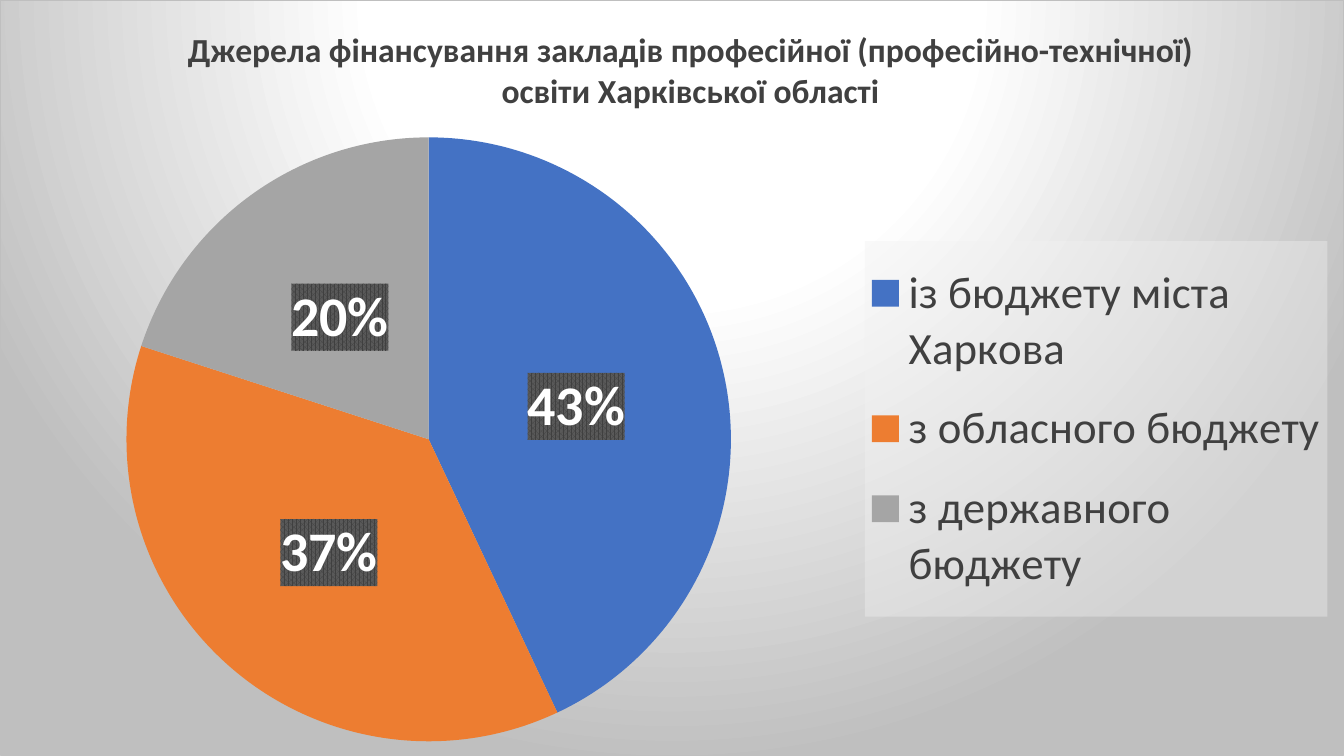
from lxml.etree import fromstring
from pptx import Presentation
from pptx.chart.data import CategoryChartData
from pptx.dml.color import RGBColor
from pptx.enum.chart import XL_CHART_TYPE, XL_LABEL_POSITION, XL_LEGEND_POSITION
from pptx.oxml.ns import qn
from pptx.util import Inches, Pt

# Content
TITLE = ("Джерела фінансування закладів професійної "
         "(професійно-технічної) освіти Харківської області")
PARTS = [
    ("із бюджету міста Харкова", 43, "4472C4"),
    ("з обласного бюджету", 37, "ED7D31"),
    ("з державного бюджету", 20, "A5A5A5"),
]
WIDE, HIGH = 13.33, 7.5
FACE, DARK, WHITE = "Calibri", "404040", "FFFFFF"
# Left, top, width, height in inches
PIE_BOX = (1.25, 1.36, 6, 6)
KEY_BOX = (8.58, 2.39, 4.59, 3.73)
HEAD_BOX = (1.8, 0.2)

NS = ('xmlns:c="http://schemas.openxmlformats.org/drawingml/2006/chart" '
      'xmlns:a="http://schemas.openxmlformats.org/drawingml/2006/main"')


def color(code):
    return RGBColor.from_string(code)


def style(font, size, code, bold=False):
    font.name, font.size, font.bold = FACE, Pt(size), bold
    font.color.rgb = color(code)


def put(frame, text, **form):
    run = frame.paragraphs[0].add_run()
    run.text = text
    style(run.font, **form)


def look(fill, line="<a:ln><a:noFill/></a:ln>"):
    return fromstring(f"<c:spPr {NS}>{fill}{line}</c:spPr>")


def tint(code, extra=""):
    return f'<a:srgbClr val="{code}">{extra}</a:srgbClr>'


def layout(box, inner=False):
    """Turn a box in inches into a chart layout in shares of the slide."""
    keys = ("x", "y", "w", "h")[:len(box)]
    tags = '<c:layoutTarget val="inner"/>' if inner else ""
    tags += "".join(f'<c:{key}Mode val="edge"/>' for key in keys[:2])
    for key, size, full in zip(keys, box, (WIDE, HIGH) * 2):
        tags += f'<c:{key} val="{size / full:.4f}"/>'
    return fromstring(
        f"<c:layout {NS}><c:manualLayout>{tags}</c:manualLayout></c:layout>")


def place(part, spot, box, inner=False):
    for old in part.findall(qn("c:layout")):
        part.remove(old)
    part.insert(spot, layout(box, inner))


# Slide and chart
deck = Presentation()
deck.slide_width, deck.slide_height = Inches(WIDE), Inches(HIGH)
slide = deck.slides.add_slide(deck.slide_layouts[6])
data = CategoryChartData()
data.categories = [name for name, _, _ in PARTS]
data.add_series("Частка", [value for _, value, _ in PARTS])
chart = slide.shapes.add_chart(
    XL_CHART_TYPE.PIE, 0, 0, Inches(WIDE), Inches(HIGH), data).chart
style(chart.font, 10, "000000")

# Title
chart.has_title = True
put(chart.chart_title.text_frame, TITLE, size=24, code=DARK, bold=True)
chart.chart_title.include_in_layout = False
place(chart.chart_title._element, 1, HEAD_BOX)

# Slices
plot = chart.plots[0]
plot.vary_by_categories = True
for i, (_, _, code) in enumerate(PARTS):
    fill = plot.series[0].points[i].format.fill
    fill.solid()
    fill.fore_color.rgb = color(code)
place(chart._chartSpace.chart.plotArea, 0, PIE_BOX, inner=True)

# Percent labels on a dark pattern
plot.has_data_labels = True
labels = plot.data_labels
labels.show_percentage, labels.show_value = True, False
labels.number_format, labels.number_format_is_linked = "0%", False
labels.position = XL_LABEL_POSITION.CENTER
style(labels.font, 40, WHITE, bold=True)
labels._element.find(qn("c:txPr")).addprevious(look(
    f'<a:pattFill prst="pct75"><a:fgClr>{tint(DARK)}</a:fgClr>'
    f'<a:bgClr>{tint("595959")}</a:bgClr></a:pattFill>'))

# Legend on a pale veil
chart.has_legend = True
legend = chart.legend
legend.position = XL_LEGEND_POSITION.RIGHT
legend.include_in_layout = False
style(legend.font, 32, DARK)
place(legend._element, 1, KEY_BOX)
veil = tint("F2F2F2", '<a:alpha val="39000"/>')
legend._element.find(qn("c:txPr")).addprevious(
    look(f"<a:solidFill>{veil}</a:solidFill>"))

# Radial background
stops = "".join(f'<a:gs pos="{spot * 1000}">{tint(code)}</a:gs>'
                for spot, code in ((0, WHITE), (39, WHITE), (100, "BFBFBF")))
chart._chartSpace.chart.addnext(look(
    f'<a:gradFill><a:gsLst>{stops}</a:gsLst><a:path path="circle">'
    '<a:fillToRect l="50000" t="-80000" r="50000" b="180000"/>'
    "</a:path></a:gradFill>",
    f'<a:ln w="9525"><a:solidFill>{tint("BFBFBF")}</a:solidFill></a:ln>'))

deck.save("out.pptx")
